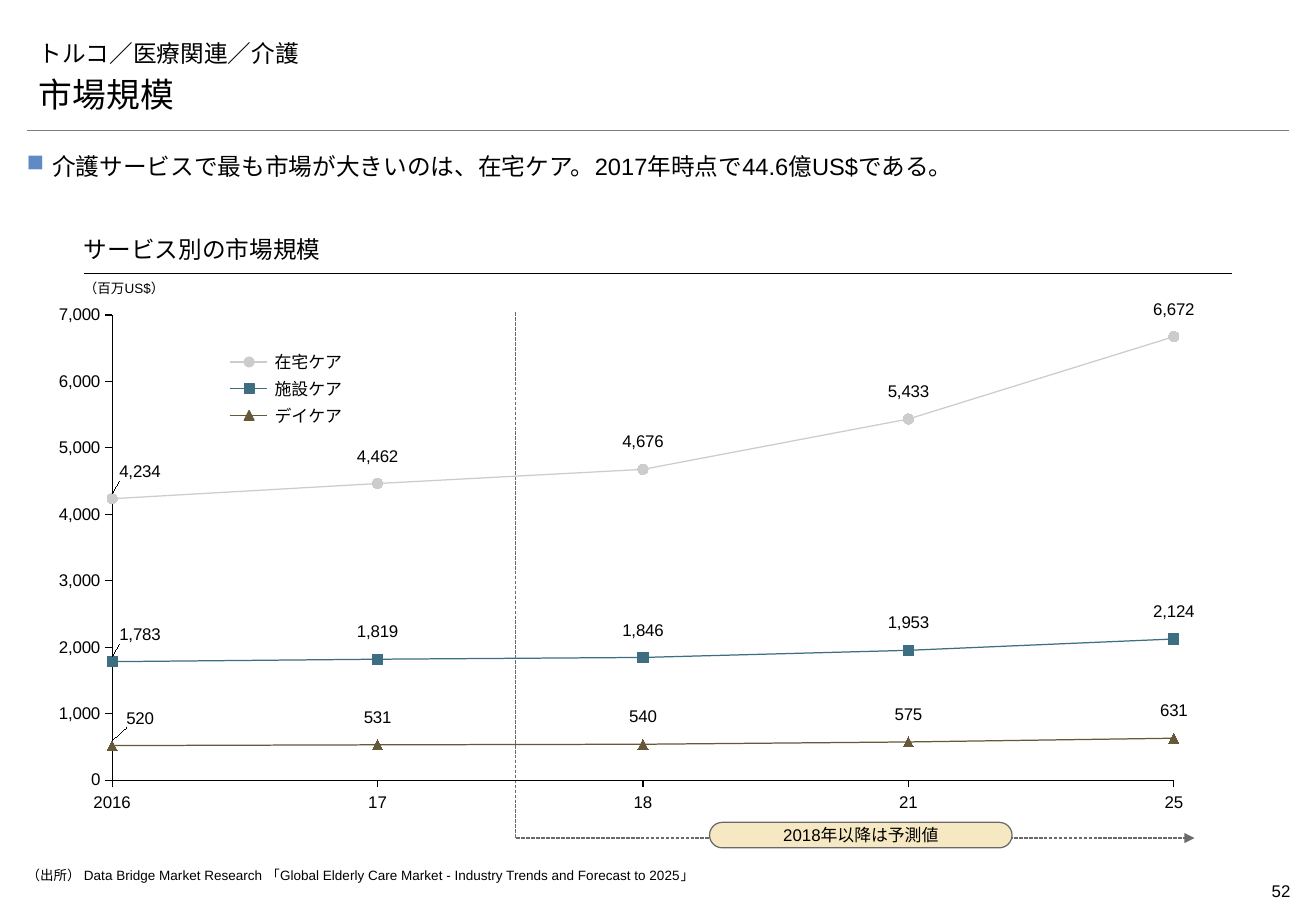
from lxml import etree
from pptx import Presentation, util as u
from pptx.chart.data import CategoryChartData
from pptx.dml.color import RGBColor
from pptx.enum import chart as ch, dml, shapes, text
from pptx.oxml import parse_xml
from pptx.oxml.ns import nsdecls, qn

TITLE = "トルコ／医療関連／介護"
TOPIC = "市場規模"
LEAD = "介護サービスで最も市場が大きいのは、在宅ケア。2017年時点で44.6億US$である。"
HEAD = "サービス別の市場規模"
UNIT = "（百万US$）"
NOTE = "2018年以降は予測値"
SOURCE = ("（出所） Data Bridge Market Research "
          "「Global Elderly Care Market - Industry Trends and Forecast to 2025」")
PAGE = "52"
YEARS = ["2016", "17", "18", "21", "25"]
MARK, SHAPE = ch.XL_MARKER_STYLE, shapes.MSO_SHAPE
CARE = [
    ("在宅ケア", "home", MARK.CIRCLE, SHAPE.OVAL, [4234, 4462, 4676, 5433, 6672]),
    ("施設ケア", "site", MARK.SQUARE, SHAPE.RECTANGLE, [1783, 1819, 1846, 1953, 2124]),
    ("デイケア", "day", MARK.TRIANGLE, SHAPE.ISOSCELES_TRIANGLE, [520, 531, 540, 575, 631]),
]
HEX = {"home": "CCCCCC", "site": "3D6E81", "day": "655939", "ink": "000000",
       "rule": "7F7F7F", "dash": "6A6A6A", "pill": "F6E8C2", "bullet": "5F8AC3"}
SANS, SHOW = "Arial", "Montserrat"
LEFT, MID, RIGHT = text.PP_ALIGN.LEFT, text.PP_ALIGN.CENTER, text.PP_ALIGN.RIGHT
TOP, CORE, LOW = (text.MSO_ANCHOR.TOP, text.MSO_ANCHOR.MIDDLE, text.MSO_ANCHOR.BOTTOM)

# Places are percentages of the slide's width and height
CHART = (3.14, 32.93, 88.18, 54.13)
PLOT = {"x": 0.061, "y": 0.029, "w": 0.915, "h": 0.945}
EDGE, FULL = 2.03, 95.94
INSET, SPAN = 6.37, 87.26
KEY_TOP, KEY_STEP = 39.73, 2.93
ROW = 2.27

prs = Presentation()
prs.slide_width, prs.slide_height = u.Inches(10.83), u.Inches(7.5)
slide = prs.slides.add_slide(prs.slide_layouts[1])
parts = slide.shapes


def across(pct):
    return round(prs.slide_width * pct / 100)


def down(pct):
    return round(prs.slide_height * pct / 100)


def area(x, y, w, h):
    return across(x), down(y), across(w), down(h)


def color(name):
    return RGBColor.from_string(HEX[name])


def style(font, size, face=SANS):
    font.size, font.name, font.bold = u.Pt(size), face, False
    font.color.rgb = color("ink")


def stroke(line, name, width=0.75):
    line.color.rgb, line.width = color(name), u.Pt(width)


def write(shape, words, size, face=SANS, align=LEFT, anchor=TOP, wrap=True, pad=None):
    """Fill a shape with one paragraph; return it and a call that sets its font.

    Pad is left, top, right, bottom in inches.
    """
    frame = shape.text_frame
    frame.auto_size = text.MSO_AUTO_SIZE.NONE
    frame.word_wrap, frame.vertical_anchor = wrap, anchor
    if pad:
        (frame.margin_left, frame.margin_top,
         frame.margin_right, frame.margin_bottom) = map(u.Inches, pad)
    para = frame.paragraphs[0]
    para.text, para.alignment, para.space_before = words, align, u.Pt(0)
    return para, lambda: style(para.font, size, face)


def label(place, words, size, pad=(0, 0, 0, 0), **look):
    write(parts.add_textbox(*area(*place)), words, size, pad=pad, **look)[1]()


def rule(x, y, end, name, width=0.75):
    line = parts.add_connector(shapes.MSO_CONNECTOR.STRAIGHT,
                               across(x), down(y), across(end), down(y))
    stroke(line.line, name, width)
    etree.SubElement(line._element.spPr, qn("a:effectLst"))


def bullet(para, indent, *marks):
    props = para._p.get_or_add_pPr()
    props.set("marL", str(u.Inches(indent)))
    props.set("indent", str(-u.Inches(indent)))
    for mark in marks:
        props.append(parse_xml(mark))


def heading():
    rule(EDGE, 14.27, EDGE + FULL, "rule", 0.25)
    label((90.77, 96, 7.29, 3.6), PAGE, 10, align=RIGHT, pad=(0, 0.05, 0, 0.05))
    title, topic = parts.title, slide.placeholders[1]
    for holder, y, words, size in ((title, 2.8, TITLE, 14), (topic, 8, TOPIC, 20)):
        holder.left, holder.top, holder.width, holder.height = area(EDGE, y, FULL, 5.2)
        para, finish = write(holder, words, size, face=SHOW, anchor=LOW)
        bullet(para, 0, f'<a:buNone {nsdecls("a")}/>')
        finish()
    box = parts.add_textbox(*area(EDGE, 16.4, FULL, 3.47))
    para, finish = write(box, LEAD, 14, align=text.PP_ALIGN.JUSTIFY, pad=(0, 0, 0, 0))
    para.line_spacing, para.space_after = 1.1, u.Pt(2)
    bullet(para, 0.21,
           f'<a:buClr {nsdecls("a")}><a:srgbClr val="{HEX["bullet"]}"/></a:buClr>',
           f'<a:buChar {nsdecls("a")} char="■"/>')
    finish()
    rule(INSET, 30, INSET + SPAN, "ink")
    label((INSET, 25.87, SPAN, 4.13), HEAD, 14, face=SHOW, anchor=LOW,
          pad=(0, 0.05, 0, 0.08))
    label((INSET, 30, 8.4, 3.2), UNIT, 8, anchor=CORE)


def forecast():
    x, base = across(39.15), down(92)
    draw = parts.build_freeform(x, down(34.27))
    draw.add_line_segments([(x, base), (across(90.77), base)], close=False)
    arrow = draw.convert_to_shape()
    arrow.shadow.inherit = False
    arrow.fill.background()
    stroke(arrow.line, "dash")
    arrow.line.dash_style = dml.MSO_LINE.SQUARE_DOT
    etree.SubElement(arrow.line._get_or_add_ln(), qn("a:tailEnd"), type="triangle")
    pill = solid(SHAPE.ROUNDED_RECTANGLE, (53.92, 90.27, 22.99, 2.8), "pill", "dash")
    pill.adjustments[0] = 0.5
    write(pill, NOTE, 10, align=MID, anchor=CORE, wrap=False)[1]()


def solid(kind, place, fill, line):
    shape = parts.add_shape(kind, *area(*place))
    shape.shadow.inherit = False
    shape.fill.solid()
    shape.fill.fore_color.rgb = color(fill)
    stroke(shape.line, line)
    return shape


def layout(**values):
    """Manual chart layout from its settings."""
    rows = "".join(f'<c:{key} val="{val}"/>' for key, val in values.items())
    return parse_xml(f'<c:layout {nsdecls("c")}><c:manualLayout>{rows}'
                     '</c:manualLayout></c:layout>')


def tag(series):
    """Put values above the points, joined to them by leader lines."""
    for i in range(len(YEARS)):
        spot = series.points[i].data_label
        spot.position = ch.XL_LABEL_POSITION.ABOVE
        spot._dLbl.insert(1, layout(x=0 if i else 0.024, y=-0.016))
    tags = series.data_labels
    tags.show_value, tags.position = True, ch.XL_LABEL_POSITION.ABOVE
    tags.number_format, tags.number_format_is_linked = "#,##0", False
    style(tags.font, 10)
    tags._element.append(parse_xml(
        f'<c:extLst {nsdecls("c")}><c:ext uri="{{CE6537A1-D6FC-4f65-9D91-7224C49458BB}}" '
        'xmlns:c15="http://schemas.microsoft.com/office/drawing/2012/chart">'
        '<c15:showLeaderLines val="1"/></c:ext></c:extLst>'))


def graph():
    data = CategoryChartData(number_format="#,##0")
    data.categories = YEARS
    for name, *_, values in CARE:
        data.add_series(name, values)
    chart = parts.add_chart(ch.XL_CHART_TYPE.LINE_MARKERS, *area(*CHART), data).chart
    chart.has_legend = chart.has_title = False
    style(chart.font, 10)
    chart.plots[0].vary_by_categories = False
    for axis in (chart.category_axis, chart.value_axis):
        axis.has_major_gridlines = False
        axis.major_tick_mark = ch.XL_TICK_MARK.OUTSIDE
        stroke(axis.format.line, "ink")
        style(axis.tick_labels.font, 10)
    chart.category_axis.tick_label_position = ch.XL_TICK_LABEL_POSITION.NONE
    axis = chart.value_axis
    axis.minimum_scale, axis.maximum_scale, axis.major_unit = 0, 7000, 1000
    axis.tick_labels.number_format = "#,##0"
    axis.tick_labels.number_format_is_linked = False
    axis._element.find(qn("c:crosses")).addnext(
        parse_xml(f'<c:crossBetween {nsdecls("c")} val="midCat"/>'))
    plot = chart._chartSpace.chart.plotArea
    for old in plot.findall(qn("c:layout")):
        plot.remove(old)
    plot.insert(0, layout(layoutTarget="inner", xMode="edge", yMode="edge", **PLOT))
    for series, (_, name, mark, *_) in zip(chart.plots[0].series, CARE):
        series.smooth = False
        stroke(series.format.line, name)
        dot = series.marker
        dot.style, dot.size = mark, 6
        dot.format.fill.solid()
        dot.format.fill.fore_color.rgb = color(name)
        stroke(dot.format.line, name)
        tag(series)


def captions():
    start = CHART[0] + CHART[2] * PLOT["x"]
    step, wide = CHART[2] * PLOT["w"] / (len(YEARS) - 1), 2.95
    for i, year in enumerate(YEARS):
        label((start + i * step - wide / 2, 86.93, wide, ROW), year, 10,
              align=MID, wrap=False)
    for i, (name, hue, _, kind, _) in enumerate(CARE):
        y = KEY_TOP + i * KEY_STEP
        rule(17.45, y, 20.31, hue)
        solid(kind, (18.56, y - 0.53, 0.74, 1.07), hue, hue)
        label((20.87, y - ROW / 2, 4.89, ROW), name, 10, anchor=CORE, wrap=False)


heading()
forecast()
label((EDGE, 95.2, SPAN, 2.13), SOURCE, 8)
graph()
captions()
prs.save("out.pptx")
